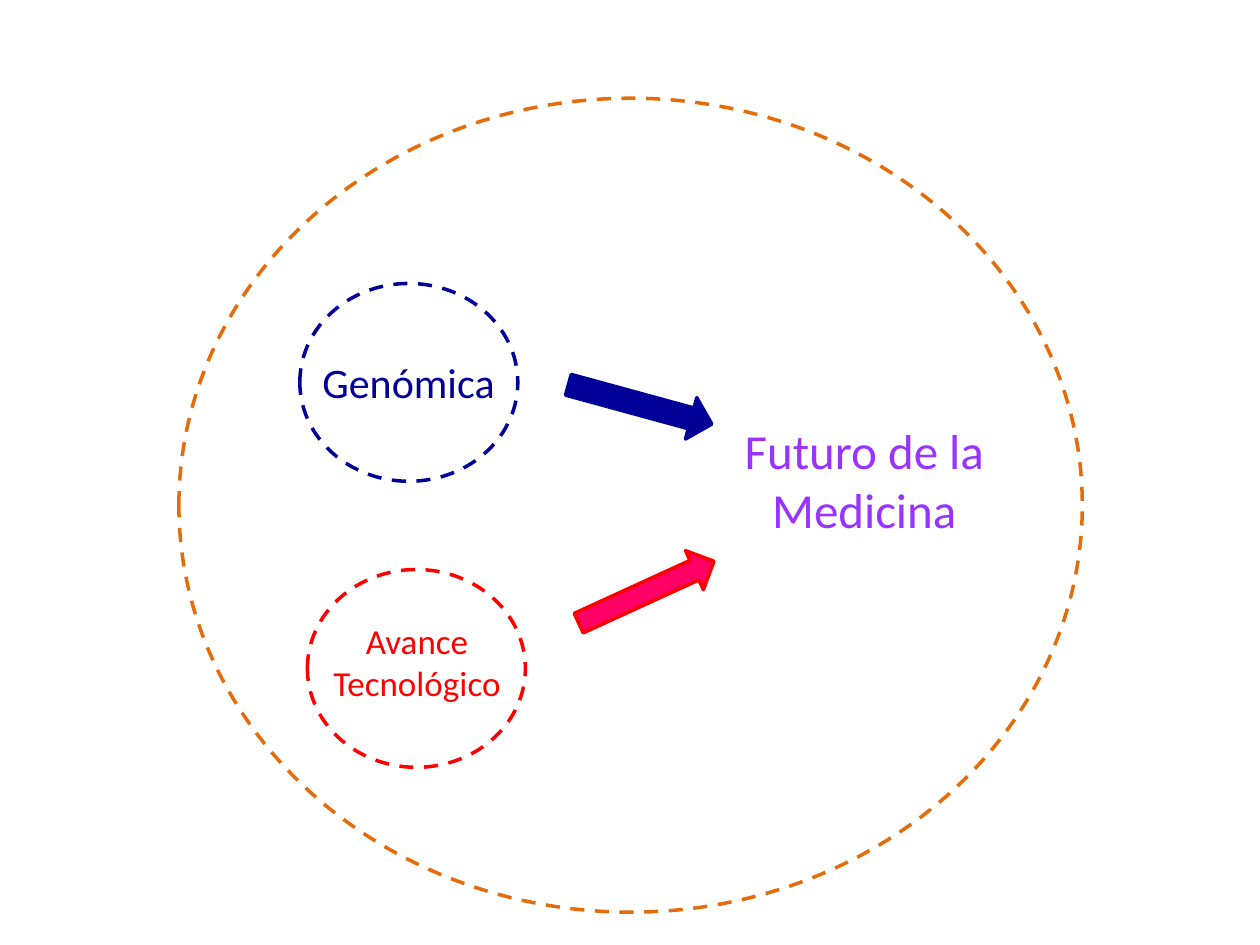
from pptx import Presentation
from pptx.dml.color import RGBColor
from pptx.enum.dml import MSO_LINE
from pptx.enum.shapes import MSO_SHAPE
from pptx.enum.text import MSO_AUTO_SIZE, PP_ALIGN
from pptx.util import Inches, Pt

OVAL = MSO_SHAPE.OVAL
ARROW = MSO_SHAPE.RIGHT_ARROW
DASH = MSO_LINE.DASH
FIT = MSO_AUTO_SIZE.SHAPE_TO_FIT_TEXT
LEFT, CENTER = PP_ALIGN.LEFT, PP_ALIGN.CENTER

COLORS = {
    "orange": "E46C0A",
    "navy": "000099",
    "red": "FF0000",
    "pink": "FF0066",
    "violet": "9933FF",
}


def color(name):
    return RGBColor.from_string(COLORS[name])


def write(frame, text, size=20, ink="navy", align=CENTER, font="Calibri"):
    """Fill a text frame, one paragraph for each line of text."""
    for i, line in enumerate(text.split("\n")):
        para = frame.add_paragraph() if i else frame.paragraphs[0]
        para.alignment = align
        run = para.add_run()
        run.text = line
        run.font.name = font
        run.font.size = Pt(size)
        run.font.color.rgb = color(ink)


class Canvas:
    def __init__(self, slide, width=2):
        self.slide = slide
        self.width = Pt(width)

    def shape(self, kind, box, line):
        item = self.slide.shapes.add_shape(kind, *map(Inches, box))
        item.shadow.inherit = False
        item.line.color.rgb = color(line)
        item.line.width = self.width
        return item

    def ring(self, box, line):
        item = self.shape(OVAL, box, line)
        item.fill.background()
        item.line.dash_style = DASH

    def arrow(self, left, top, angle, fill, line):
        item = self.shape(ARROW, (left, top, 1.18, 0.34), line)
        item.fill.solid()
        item.fill.fore_color.rgb = color(fill)
        item.rotation = angle

    def label(self, box, text, wrap=False, **style):
        frame = self.slide.shapes.add_textbox(*map(Inches, box)).text_frame
        frame.word_wrap = wrap
        frame.auto_size = FIT
        write(frame, text, **style)


def main():
    deck = Presentation()
    deck.slide_width, deck.slide_height = Inches(10), Inches(7.5)
    blank = deck.slide_layouts[6]
    canvas = Canvas(deck.slides.add_slide(blank))

    canvas.ring((1.42, 0.78, 7.17, 6.46), "orange")
    canvas.ring((2.38, 2.25, 1.73, 1.57), "navy")
    canvas.ring((2.44, 4.52, 1.73, 1.57), "red")

    canvas.label((2.46, 2.78, 1.58, 0.5), "Genómica", size=24, align=LEFT)
    canvas.label((5.73, 3.29, 2.26, 1.04), "Futuro de la Medicina",
                 wrap=True, size=28, ink="violet")
    canvas.label((2.54, 4.87, 1.54, 0.77), "Avance\nTecnológico", ink="red")

    canvas.arrow(4.49, 3.04, 15.3, "navy", "navy")
    canvas.arrow(4.54, 4.53, 335.4, "pink", "red")

    deck.save("out.pptx")


if __name__ == "__main__":
    main()
